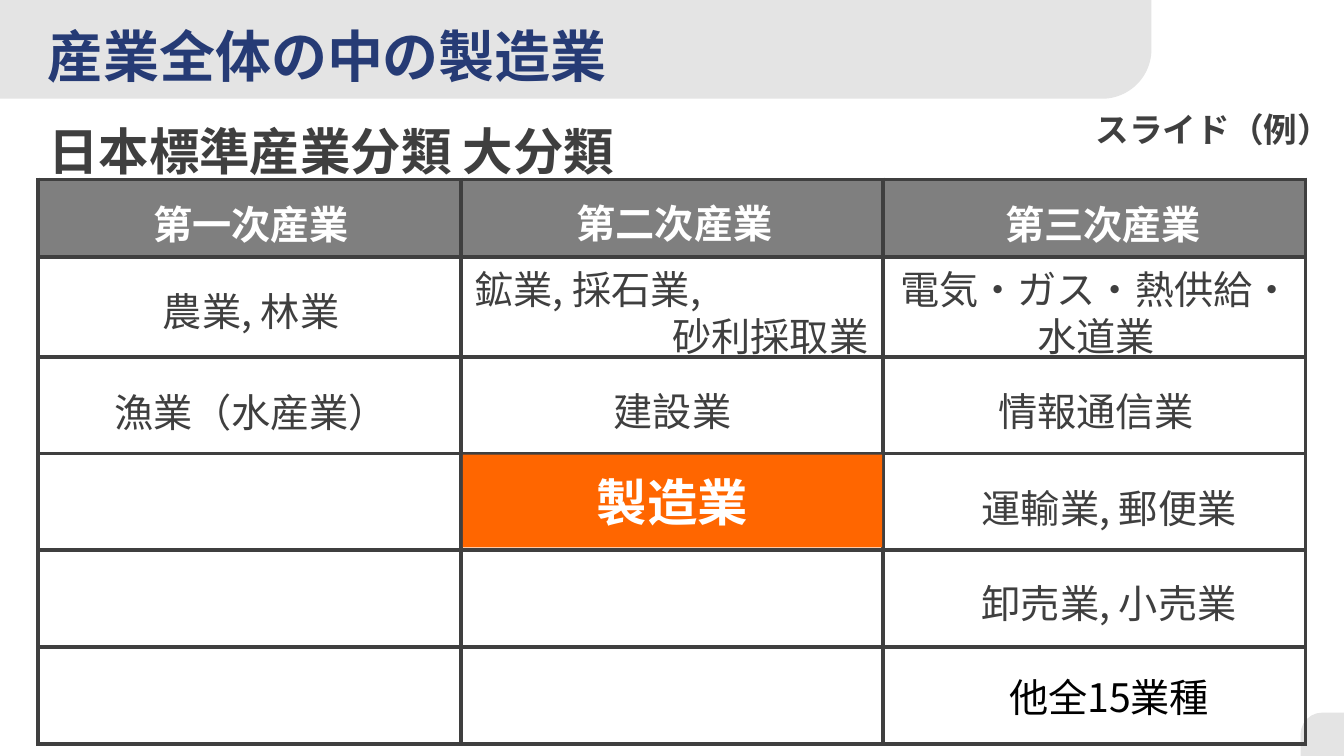
from lxml.etree import SubElement
from pptx import Presentation
from pptx.dml.color import RGBColor
from pptx.enum.shapes import MSO_SHAPE
from pptx.enum.text import MSO_ANCHOR, PP_ALIGN
from pptx.oxml.ns import qn
from pptx.util import Inches, Pt

THEME = {
    "font": "Noto Sans CJK JP",
    "navy": "263B75", "ink": "3F3F3F", "black": "000000", "white": "FFFFFF",
    "band": "E4E4E4", "header": "7F7F7F", "accent": "FF6600",
    "title": 40, "heading": 36, "body": 28, "tag": 24, "border": 3,
}
LEFT, CENTER, RIGHT = PP_ALIGN.LEFT, PP_ALIGN.CENTER, PP_ALIGN.RIGHT

# Outline shapes: left, top, width, height, flip
BANDS = [
    (0, 0, 11.42, 0.98, "flipV"),
    (12.9, 7.07, 0.43, 0.43, "flipH"),
]
# Headings: text, left, top, width, height, size, colour, line spacing, top and bottom inset
HEADINGS = [
    ("産業全体の中の製造業", 0.37, 0.13, 11.05, 0.75, "title", "navy", 1, (0.08, 0)),
    ("日本標準産業分類 大分類", 0.38, 0.84, 7, 0.93, "heading", "ink", 1.5, (0.05, 0.05)),
    ("スライド（例）", 10.77, 1, 2.56, 0.48, "tag", "ink", 1, (0.08, 0)),
]
TABLE_LEFT, TABLE_TOP = 0.38, 1.78
COL_WIDTHS = [4.19] * 3
ROW_HEIGHTS = [0.77, 0.99] + [0.96] * 4
FOCUS = ("製造業", 4.59, 4.51, 4.16, 0.92)

# Labels by sector: centre x, middle y, width, text
SECTORS = [
    (2.49, 2.22, 3.13, "第一次産業"),
    (6.69, 2.21, 3.13, "第二次産業"),
    (10.94, 2.22, 3.13, "第三次産業"),
]
INDUSTRIES = [
    (2.49, 3.08, 2.5, "農業, 林業"),
    (2.49, 4.09, 3.13, "漁業（水産業）"),
    (6.67, 4.08, 2.5, "建設業"),
    (10.87, 3.1, 4.17, "電気・ガス・熱供給・水道業"),
    (10.87, 4.08, 2.5, "情報通信業"),
    (11, 5.04, 3.75, "運輸業, 郵便業"),
    (11, 5.98, 3.36, "卸売業, 小売業"),
]
OTHERS = (11, 6.91, 2.5, "他全15業種")
MINING = [("鉱業, 採石業,", LEFT), ("砂利採取業", RIGHT)]


def rgb(name):
    return RGBColor.from_string(THEME[name])


def write(shape, lines, size, color, bold=False, anchor=MSO_ANCHOR.MIDDLE,
          spacing=1, insets=(0.05, 0.05)):
    """Fill a shape with (text, alignment) paragraphs."""
    tf = shape.text_frame
    tf.word_wrap = True
    tf.vertical_anchor = anchor
    tf.margin_left = tf.margin_right = Inches(0.1)
    tf.margin_top, tf.margin_bottom = map(Inches, insets)
    for i, (text, align) in enumerate(lines):
        p = tf.paragraphs[0] if i == 0 else tf.add_paragraph()
        p.alignment, p.line_spacing = align, spacing
        r = p.add_run()
        r.text = text
        r.font.name, r.font.size, r.font.bold = THEME["font"], Pt(THEME[size]), bold
        r.font.color.rgb = rgb(color)
        SubElement(r.font._element, qn("a:ea"), typeface=THEME["font"])


def add_text(s, box, lines, size, color, **style):
    write(s.shapes.add_textbox(*map(Inches, box)), lines, size, color, **style)


def add_label(s, label, color, bold=False):
    """Centre one or two lines of text on a point."""
    x, y, w, text = label
    h = 1.04 if len(text) > 10 else 0.57
    add_text(s, (x - w / 2, y - h / 2, w, h), [(text, CENTER)], "body", color, bold=bold)


def add_block(s, kind, box, color):
    sp = s.shapes.add_shape(kind, *map(Inches, box))
    sp.shadow.inherit = False
    sp.fill.solid()
    sp.fill.fore_color.rgb = rgb(color)
    sp.line.fill.background()
    return sp


def set_borders(cell):
    tcPr = cell._tc.get_or_add_tcPr()
    for side in ("lnL", "lnR", "lnT", "lnB"):
        ln = SubElement(tcPr, qn(f"a:{side}"), w=str(Pt(THEME["border"])))
        fill = SubElement(ln, qn("a:solidFill"))
        SubElement(fill, qn("a:srgbClr"), val=THEME["ink"])


def add_grid(s):
    table = s.shapes.add_table(
        len(ROW_HEIGHTS), len(COL_WIDTHS), Inches(TABLE_LEFT), Inches(TABLE_TOP),
        Inches(sum(COL_WIDTHS)), Inches(sum(ROW_HEIGHTS))).table
    table.first_row = table.horz_banding = False
    for col, width in zip(table.columns, COL_WIDTHS):
        col.width = Inches(width)
    for i, (row, height) in enumerate(zip(table.rows, ROW_HEIGHTS)):
        row.height = Inches(height)
        for cell in row.cells:
            set_borders(cell)
            if i == 0:
                cell.fill.solid()
                cell.fill.fore_color.rgb = rgb("header")
            else:
                cell.fill.background()


def main():
    prs = Presentation()
    prs.slide_width, prs.slide_height = Inches(13.33), Inches(7.5)
    s = prs.slides.add_slide(prs.slide_layouts[6])

    for *box, flip in BANDS:
        sp = add_block(s, MSO_SHAPE.ROUND_1_RECTANGLE, box, "band")
        sp.adjustments[0] = 0.5
        sp._element.spPr.find(qn("a:xfrm")).set(flip, "1")
    for text, x, y, w, h, size, color, spacing, insets in HEADINGS:
        add_text(s, (x, y, w, h), [(text, LEFT)], size, color, bold=True,
                 anchor=MSO_ANCHOR.TOP, spacing=spacing, insets=insets)

    add_grid(s)
    text, *box = FOCUS
    write(add_block(s, MSO_SHAPE.RECTANGLE, box, "accent"),
          [(text, CENTER)], "heading", "white", bold=True)
    for label in SECTORS:
        add_label(s, label, "white", bold=True)
    for label in INDUSTRIES:
        add_label(s, label, "ink")
    add_label(s, OTHERS, "black")
    add_text(s, (4.61, 2.58, 4.1, 1.04), MINING, "body", "ink")

    prs.save("out.pptx")


if __name__ == "__main__":
    main()
